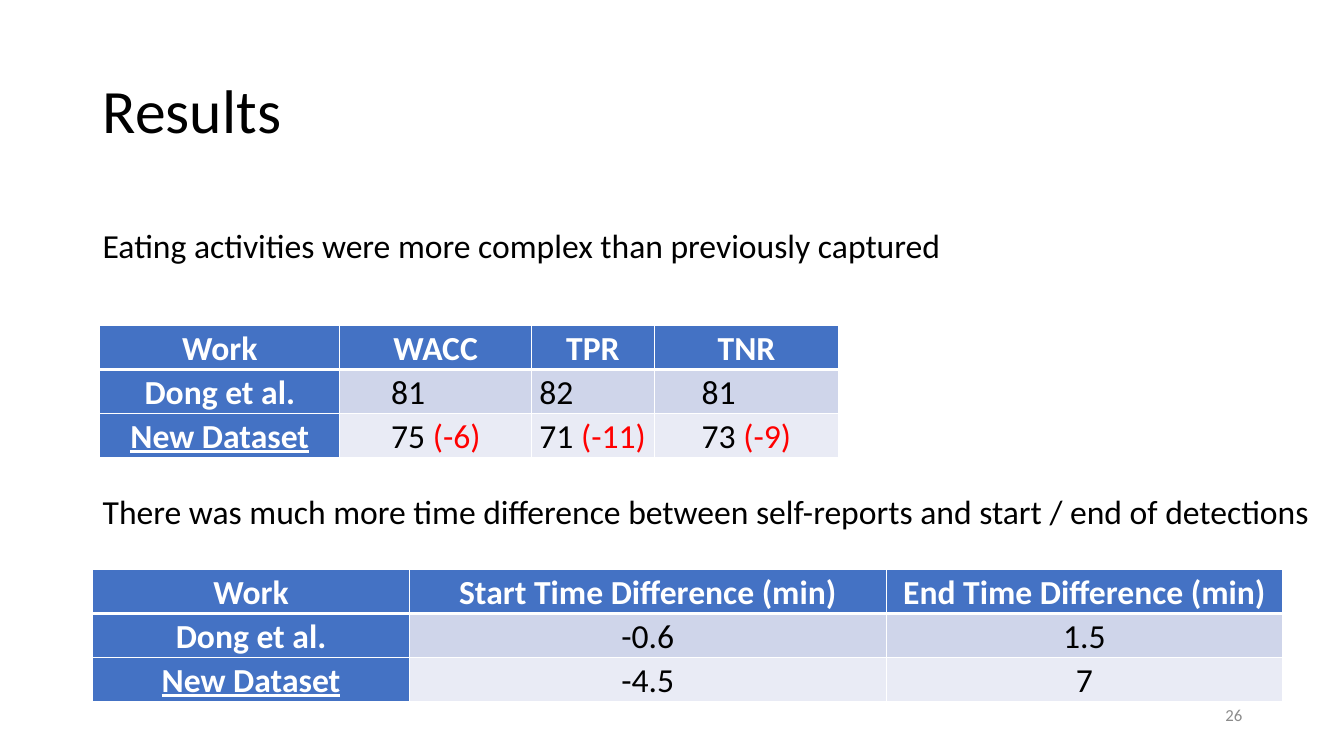
from lxml import etree
from pptx import Presentation
from pptx.dml.color import RGBColor as RGB
from pptx.enum.text import MSO_ANCHOR as ANCHOR, PP_ALIGN as ALIGN
from pptx.oxml.ns import qn
from pptx.util import Inches, Pt

COLORS = {
    "black": "000000",
    "white": "FFFFFF",
    "gray": "8C8C8C",
    "red": "FF0000",
    "head": "4472C4",
    "odd": "CFD5EA",
    "even": "E9EBF5",
}
ROW_H = 0.43


def put(p, text, size=24, color="black", bold=False, underline=False,
        align=ALIGN.LEFT, spacing=1.0):
    p.alignment = align
    p.line_spacing = spacing
    r = p.add_run()
    r.text = text
    r.font.name = "Calibri"
    r.font.size = Pt(size)
    r.font.bold = bold
    r.font.underline = underline
    r.font.color.rgb = RGB.from_string(COLORS[color])


def add_border(cell, side, width):
    ln = etree.SubElement(cell._tc.get_or_add_tcPr(), qn(f"a:ln{side}"), w=str(Pt(width)))
    fill = etree.SubElement(ln, qn("a:solidFill"))
    etree.SubElement(fill, qn("a:srgbClr"), val=COLORS["white"])


prs = Presentation()
prs.slide_width = Inches(13.33)
prs.slide_height = Inches(7.5)
s = prs.slides.add_slide(prs.slide_layouts[5])

title = s.shapes.title
title.left, title.top = Inches(0.92), Inches(0.4)
title.width, title.height = Inches(11.5), Inches(1.45)
title.text_frame.vertical_anchor = ANCHOR.MIDDLE
put(title.text_frame.paragraphs[0], "Results", size=44, spacing=0.9)

tables = [
    (0.92, 5.65, [3.14, 4.73, 3.93], None, [
        ["Work", "Start Time Difference (min)", "End Time Difference (min)"],
        ["Dong et al.", "-0.6", "1.5"],
        ["New Dataset", "-4.5", "7"],
    ]),
    (0.99, 3.23, [2.38, 1.9, 1.22, 1.83], [0.07, 0.51, 0.08, 0.47], [
        ["Work", "WACC", "TPR", "TNR"],
        ["Dong et al.", "81", "82", "81"],
        ["New Dataset", "75 (-6)", "71 (-11)", "73 (-9)"],
    ]),
]
for left, top, widths, indents, rows in tables:
    table = s.shapes.add_table(len(rows), len(widths), Inches(left), Inches(top),
                               Inches(sum(widths)), Inches(ROW_H * len(rows))).table
    for col, width in zip(table.columns, widths):
        col.width = Inches(width)
    for i, row in enumerate(rows):
        table.rows[i].height = Inches(ROW_H)
        for j, text in enumerate(row):
            cell = table.cell(i, j)
            is_head = i == 0 or j == 0
            is_indented = indents is not None and not is_head
            cell.margin_left = Inches(indents[j] if is_indented else 0.07)
            cell.margin_right = Inches(0.07)
            cell.margin_top = cell.margin_bottom = 0
            cell.vertical_anchor = ANCHOR.BOTTOM
            for side in "LRTB":
                is_thick = (i, side) in [(0, "B"), (1, "T")]
                add_border(cell, side, 3 if is_thick else 1)
            cell.fill.solid()
            fill = "head" if is_head else "odd" if i == 1 else "even"
            cell.fill.fore_color.rgb = RGB.from_string(COLORS[fill])

            p = cell.text_frame.paragraphs[0]
            align = ALIGN.LEFT if is_indented else ALIGN.CENTER
            value, paren, change = text.partition("(-")
            if is_head or not change:
                put(p, text, color="white" if is_head else "black", bold=is_head,
                    underline=text == "New Dataset", align=align, spacing=1.07)
            else:
                put(p, value, align=align, spacing=1.07)
                put(p, paren + change, color="red", align=align, spacing=1.07)

labels = [
    (0.92, 4.82, 12.23, 0.5, ANCHOR.TOP, False,
     "There was much more time difference between self-reports and start / end of detections", {}),
    (0.92, 2.18, 8.6, 0.5, ANCHOR.TOP, False,
     "Eating activities were more complex than previously captured", {}),
    (9.42, 6.89, 3, 0.4, ANCHOR.MIDDLE, True,
     "26", {"size": 12, "color": "gray", "align": ALIGN.RIGHT}),
]
for left, top, width, height, anchor, wrap, text, style in labels:
    tf = s.shapes.add_textbox(Inches(left), Inches(top), Inches(width), Inches(height)).text_frame
    tf.word_wrap = wrap
    tf.vertical_anchor = anchor
    put(tf.paragraphs[0], text, **style)

prs.save("out.pptx")
